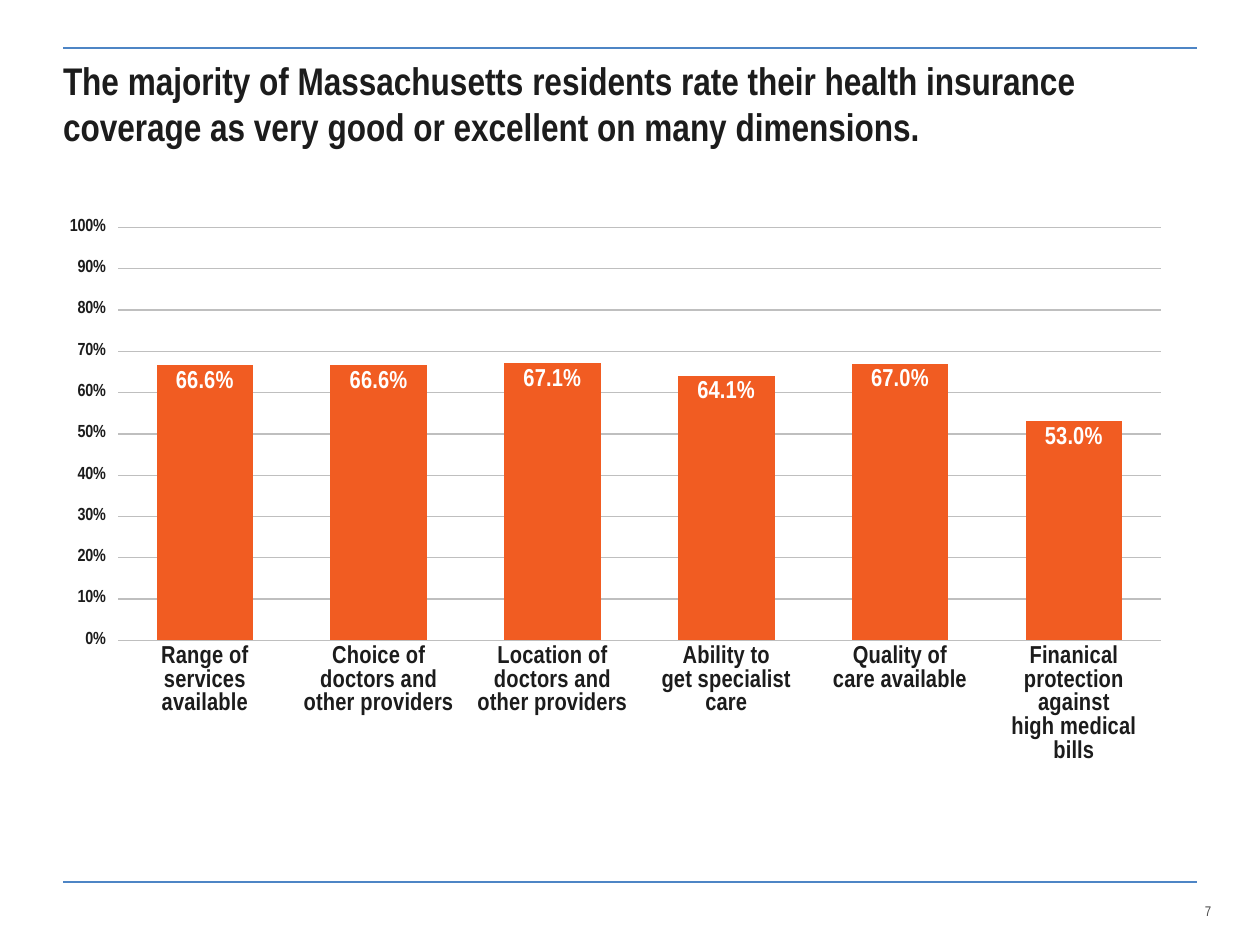
from dataclasses import dataclass

from lxml import etree
from pptx import Presentation
from pptx.chart.data import CategoryChartData
from pptx.dml.color import RGBColor
from pptx.enum.chart import XL_CHART_TYPE, XL_LABEL_POSITION, XL_TICK_MARK
from pptx.enum.shapes import MSO_CONNECTOR
from pptx.enum.text import MSO_ANCHOR, MSO_AUTO_SIZE, PP_ALIGN
from pptx.oxml.ns import qn
from pptx.util import Emu, Pt

COLUMN_CLUSTERED = XL_CHART_TYPE.COLUMN_CLUSTERED
INSIDE_END = XL_LABEL_POSITION.INSIDE_END
TICK_NONE = XL_TICK_MARK.NONE
TICK_OUTSIDE = XL_TICK_MARK.OUTSIDE
STRAIGHT = MSO_CONNECTOR.STRAIGHT
TOP = MSO_ANCHOR.TOP
MIDDLE = MSO_ANCHOR.MIDDLE
NO_AUTO_SIZE = MSO_AUTO_SIZE.NONE
LEFT = PP_ALIGN.LEFT

PIXELS_PER_INCH = 126
FONT = "Arial Narrow"
INK = RGBColor(0x1C, 0x1C, 0x1C)
GRAY = RGBColor(0x4B, 0x4B, 0x4B)
GRID = RGBColor(0xBF, 0xBF, 0xBF)
BLUE = RGBColor(0x4D, 0x85, 0xC5)
ORANGE = RGBColor(0xF1, 0x5C, 0x22)
WHITE = RGBColor(0xFF, 0xFF, 0xFF)

TITLE_LINES = (
    "The majority of Massachusetts residents rate their health insurance",
    "coverage as very good or excellent on many dimensions.",
)


@dataclass(frozen=True)
class Rule:
    top: int
    weight: float


@dataclass(frozen=True)
class Rating:
    dimension: str
    percent: float


RULES = (Rule(48, 1.5), Rule(882, 1))
RATINGS = (
    Rating("Range of\nservices\navailable", 66.6),
    Rating("Choice of\ndoctors and\nother providers", 66.6),
    Rating("Location of\ndoctors and\nother providers", 67.1),
    Rating("Ability to\nget specialist\ncare", 64.1),
    Rating("Quality of\ncare available", 67),
    Rating("Finanical protection\nagainst\nhigh medical\nbills", 53),
)
PLOT_LAYOUT = (
    ("layoutTarget", "inner"),
    ("xMode", "edge"),
    ("yMode", "edge"),
    ("x", "0.05"),
    ("y", "0.038"),
    ("w", "0.948"),
    ("h", "0.7"),
)


def px(length: int) -> Emu:
    return Emu(round(length * 914400 / PIXELS_PER_INCH))


def style_font(font, size: float, color: RGBColor, bold: bool) -> None:
    font.name = FONT
    font.size = Pt(size)
    font.color.rgb = color
    font.bold = bold


def draw_rule(slide, rule: Rule) -> None:
    connector = slide.shapes.add_connector(
        STRAIGHT, px(63), px(rule.top), px(1197), px(rule.top)
    )
    connector.line.color.rgb = BLUE
    connector.line.width = Pt(rule.weight)
    etree.SubElement(connector._element.spPr, qn("a:effectLst"))


def write_lines(shape, lines: tuple[str, ...], size: float, color: RGBColor,
                bold: bool, anchor: MSO_ANCHOR, inset: int) -> None:
    frame = shape.text_frame
    frame.word_wrap = True
    frame.auto_size = NO_AUTO_SIZE
    frame.vertical_anchor = anchor
    frame.margin_left = frame.margin_right = 0
    frame.margin_top = frame.margin_bottom = px(inset)
    paragraph = frame.paragraphs[0]
    paragraph.alignment = LEFT
    for index, line in enumerate(lines):
        if index:
            paragraph.add_line_break()
        run = paragraph.add_run()
        run.text = line
        style_font(run.font, size, color, bold)


def place_plot(chart) -> None:
    plot_area = chart._chartSpace.chart.plotArea
    for old_layout in plot_area.findall(qn("c:layout")):
        plot_area.remove(old_layout)
    layout = etree.Element(qn("c:layout"))
    manual = etree.SubElement(layout, qn("c:manualLayout"))
    for tag, value in PLOT_LAYOUT:
        etree.SubElement(manual, qn(f"c:{tag}")).set("val", value)
    plot_area.insert(0, layout)


def style_axes(chart) -> None:
    category_axis = chart.category_axis
    category_axis.major_tick_mark = TICK_NONE
    value_axis = chart.value_axis
    value_axis.major_tick_mark = TICK_OUTSIDE
    value_axis.minimum_scale = 0
    value_axis.maximum_scale = 100
    value_axis.major_unit = 10
    value_axis.tick_labels.number_format = '0"%"'
    value_axis.tick_labels.number_format_is_linked = False
    value_axis.major_gridlines.format.line.color.rgb = GRID
    value_axis.major_gridlines.format.line.width = Pt(0.75)
    for axis, size in ((category_axis, 14), (value_axis, 10)):
        axis.format.line.fill.background()
        style_font(axis.tick_labels.font, size, INK, True)


def draw_chart(slide, ratings: tuple[Rating, ...]) -> None:
    chart_data = CategoryChartData()
    chart_data.categories = [rating.dimension for rating in ratings]
    chart_data.add_series("Series 1", [rating.percent for rating in ratings])
    chart = slide.shapes.add_chart(
        COLUMN_CLUSTERED, px(63), px(205), px(1100), px(590), chart_data
    ).chart
    chart.has_legend = False
    chart.has_title = False
    style_font(chart.font, 8, INK, True)
    place_plot(chart)
    style_axes(chart)
    plot = chart.plots[0]
    plot.gap_width = 80
    plot.vary_by_categories = False
    series = plot.series[0]
    series.format.fill.solid()
    series.format.fill.fore_color.rgb = ORANGE
    labels = series.data_labels
    labels.show_value = True
    labels.position = INSIDE_END
    labels.number_format = '0.0"%"'
    labels.number_format_is_linked = False
    style_font(labels.font, 14, WHITE, True)


def main() -> None:
    presentation = Presentation()
    presentation.slide_width = px(1260)
    presentation.slide_height = px(945)
    slide = presentation.slides.add_slide(presentation.slide_layouts[5])

    for rule in RULES:
        draw_rule(slide, rule)

    title = slide.shapes.title
    title.left, title.top, title.width, title.height = (
        px(63), px(48), px(1134), px(110)
    )
    write_lines(title, TITLE_LINES, 22, INK, True, MIDDLE, 6)

    page_number = slide.shapes.add_textbox(px(1205), px(903), px(55), px(40))
    write_lines(page_number, ("7",), 8, GRAY, False, TOP, 0)

    draw_chart(slide, RATINGS)
    presentation.save("out.pptx")


if __name__ == "__main__":
    main()
